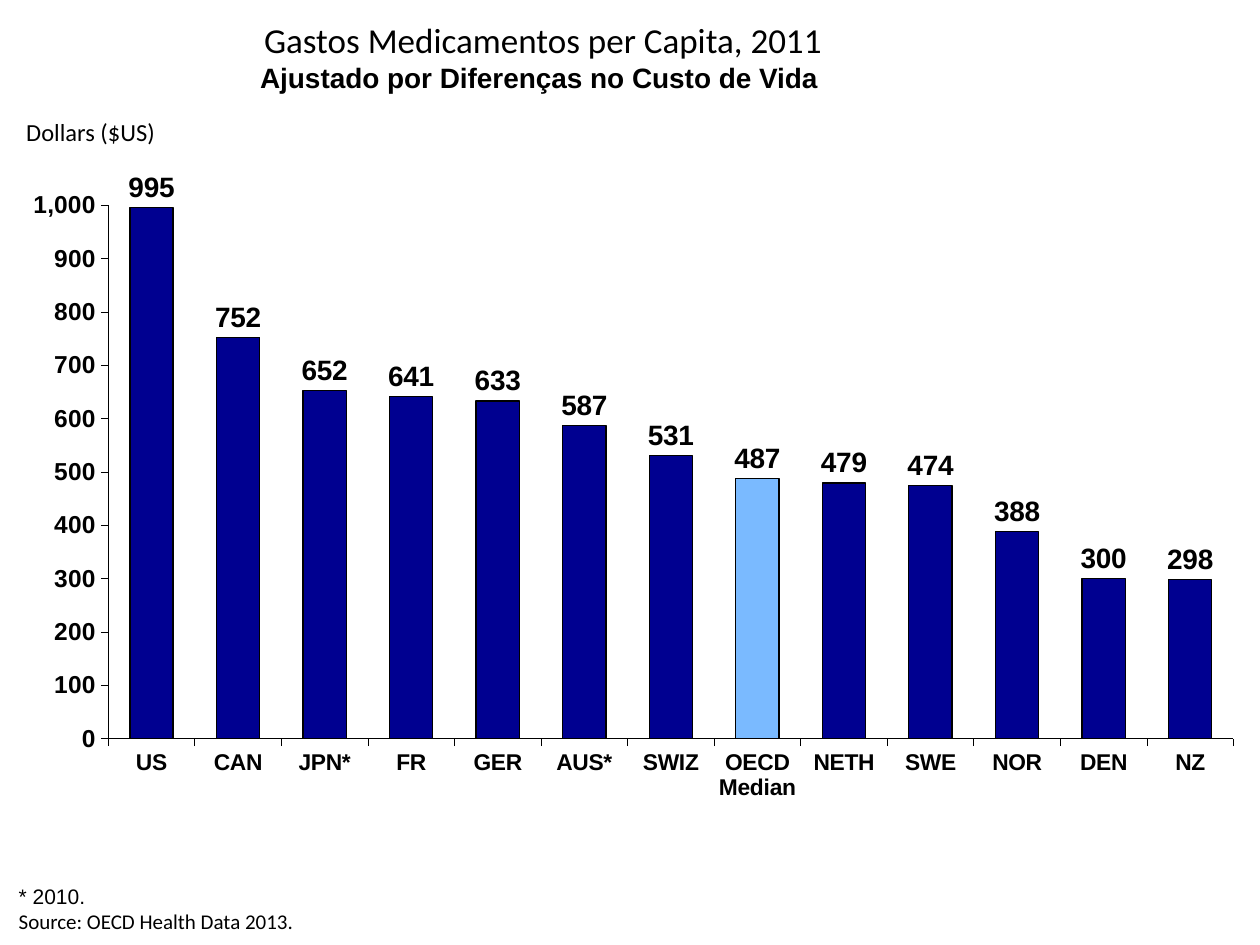
import pptx
import pptx.chart.data
import pptx.dml.color
import pptx.enum.chart
import pptx.enum.text
import pptx.util
from pptx.util import Inches

BLACK = pptx.dml.color.RGBColor(0x00, 0x00, 0x00)
NAVY = pptx.dml.color.RGBColor(0x00, 0x00, 0x90)
SKY = pptx.dml.color.RGBColor(0x7A, 0xBA, 0xFF)
ENUM = pptx.enum.chart


def style(font, name, size, bold=False):
    look = {"name": name, "size": pptx.util.Pt(size), "bold": bold}
    for key, value in look.items():
        setattr(font, key, value)
    font.color.rgb = BLACK


def draw(line, width):
    line.color.rgb = BLACK
    line.width = pptx.util.Pt(width)


deck = pptx.Presentation()
deck.slide_width, deck.slide_height = Inches(10), Inches(7.5)
slide = deck.slides.add_slide(deck.slide_layouts[5])

# Title
title = slide.shapes.title
place = {"left": 0, "top": 0.1, "width": 8.62, "height": 0.88}
for key, value in place.items():
    setattr(title, key, Inches(value))
frame = title.text_frame
frame.auto_size = pptx.enum.text.MSO_AUTO_SIZE.NONE
frame.vertical_anchor = pptx.enum.text.MSO_ANCHOR.TOP
para = frame.paragraphs[0]
para.alignment = pptx.enum.text.PP_ALIGN.CENTER
run = para.add_run()
run.text = "Gastos Medicamentos per Capita, 2011"
style(run.font, "Calibri", 20)
para.add_line_break()
run = para.add_run()
run.text = "Ajustado por Diferenças no Custo de Vida "
style(run.font, "Arial", 16, True)

# Spending by country
spend = {
    "US": 995, "CAN": 752, "JPN*": 652, "FR": 641, "GER": 633,
    "AUS*": 587, "SWIZ": 531, "OECD Median": 487, "NETH": 479,
    "SWE": 474, "NOR": 388, "DEN": 300, "NZ": 298,
}
data = pptx.chart.data.CategoryChartData(number_format="#,##0")
data.categories = list(spend)
data.add_series("Series 1", list(spend.values()))
chart = slide.shapes.add_chart(
    ENUM.XL_CHART_TYPE.COLUMN_CLUSTERED,
    Inches(0.05), Inches(1.27), Inches(9.75), Inches(5.36), data).chart
chart.has_legend = False
chart.has_title = False
style(chart.font, "Times New Roman", 14.6)

# Axes
for axis, size in ((chart.category_axis, 13), (chart.value_axis, 14)):
    axis.has_major_gridlines = False
    axis.major_tick_mark = ENUM.XL_TICK_MARK.OUTSIDE
    axis.minor_tick_mark = ENUM.XL_TICK_MARK.NONE
    style(axis.tick_labels.font, "Arial", size, True)
    draw(axis.format.line, 0.3)
scale = {"minimum_scale": 0, "maximum_scale": 1000, "major_unit": 100}
for key, value in scale.items():
    setattr(chart.value_axis, key, value)
chart.value_axis.tick_labels.number_format = "#,##0"
chart.value_axis.tick_labels.number_format_is_linked = False

# Columns, with the median picked out
plot = chart.plots[0]
plot.gap_width = 100
plot.vary_by_categories = False
bars = plot.series[0]
median = bars.points[list(spend).index("OECD Median")]
for part, color in ((bars, NAVY), (median, SKY)):
    part.format.fill.solid()
    part.format.fill.fore_color.rgb = color
    draw(part.format.line, 0.75)

# Value labels
labels = bars.data_labels
marks = {
    "show_value": True, "number_format": "#,##0",
    "number_format_is_linked": False,
    "position": ENUM.XL_LABEL_POSITION.OUTSIDE_END,
}
for key, value in marks.items():
    setattr(labels, key, value)
style(labels.font, "Arial", 16, True)

# Fixed inner plot area
area = chart._chartSpace.chart.plotArea
for old in area.findall(pptx.oxml.ns.qn("c:layout")):
    area.remove(old)
layout = pptx.oxml.parse_xml(
    "<c:layout %s><c:manualLayout>"
    '<c:layoutTarget val="inner"/><c:xMode val="edge"/><c:yMode val="edge"/>'
    '<c:x val="0.083"/><c:y val="0.067"/><c:w val="0.916"/><c:h val="0.79"/>'
    "</c:manualLayout></c:layout>" % pptx.oxml.ns.nsdecls("c"))
area.insert(0, layout)

# Unit and footnotes
notes = (
    ("* 2010.", 0.05, 6.96, 1.22, 0.3, "Arial", 12, True),
    ("Source: OECD Health Data 2013.", 0.05, 7.16, 4.06, 0.3, "Calibri", 12, True),
    ("Dollars ($US)", 0.11, 0.88, 1.43, 0.34, "Calibri", 14, False),
)
for text, left, top, width, height, face, size, wrap in notes:
    box = slide.shapes.add_textbox(
        Inches(left), Inches(top), Inches(width), Inches(height))
    box.text_frame.word_wrap = wrap
    box.text_frame.auto_size = pptx.enum.text.MSO_AUTO_SIZE.SHAPE_TO_FIT_TEXT
    run = box.text_frame.paragraphs[0].add_run()
    run.text = text
    style(run.font, face, size)

deck.save("out.pptx")
